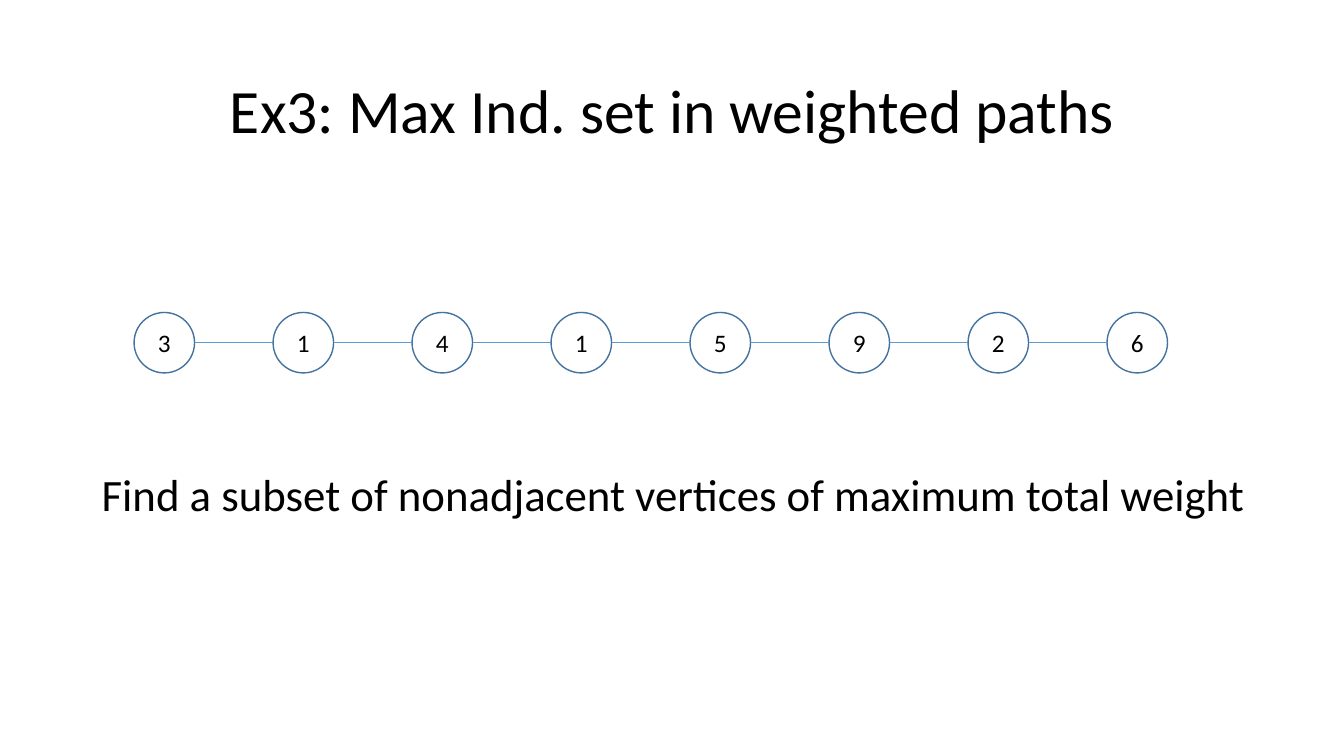
from lxml import etree
from pptx import Presentation
from pptx import util as u
from pptx.dml.color import RGBColor
from pptx.enum import shapes, text
from pptx.oxml.ns import qn

BLACK = RGBColor(0x00, 0x00, 0x00)
NODE_LINE = RGBColor(0x43, 0x73, 0x9E)
EDGE_LINE = RGBColor(0x5B, 0x9B, 0xD5)
FONT = "Calibri"
WEIGHTS = [3, 1, 4, 1, 5, 9, 2, 6]
NODE_SIZE = 0.6


def write(shape, words, size, align, frame_format, line_spacing=None):
    """Fill a shape with one formatted paragraph."""
    frame = shape.text_frame
    for name, value in frame_format.items():
        setattr(frame, name, value)
    para = frame.paragraphs[0]
    para.alignment = align
    if line_spacing:
        para.line_spacing = line_spacing
    span = para.add_run()
    span.text = words
    for name, value in {"name": FONT, "size": u.Pt(size)}.items():
        setattr(span.font, name, value)
    span.font.color.rgb = BLACK


def style_line(shape, color):
    shape.line.color.rgb = color
    shape.line.width = u.Pt(1)


def add_title(page, left, top, width, height):
    title = page.shapes.title
    box = {"left": left, "top": top, "width": width, "height": height}
    for name, value in box.items():
        setattr(title, name, u.Inches(value))
    write(title, "Ex3: Max Ind. set in weighted paths", 44, text.PP_ALIGN.CENTER,
          {"vertical_anchor": text.MSO_ANCHOR.MIDDLE, "word_wrap": True,
           "auto_size": text.MSO_AUTO_SIZE.NONE}, 0.9)


def add_weighted_path(page, left, top, width):
    step = (width - NODE_SIZE) / (len(WEIGHTS) - 1)
    lefts = [left + index * step for index in range(len(WEIGHTS))]

    # Vertices
    for node_left, weight in zip(lefts, WEIGHTS):
        node = page.shapes.add_shape(
            shapes.MSO_SHAPE.OVAL, u.Inches(node_left), u.Inches(top),
            u.Inches(NODE_SIZE), u.Inches(NODE_SIZE))
        node.shadow.inherit = False
        node.fill.background()
        style_line(node, NODE_LINE)
        write(node, str(weight), 18, text.PP_ALIGN.CENTER,
              {"vertical_anchor": text.MSO_ANCHOR.MIDDLE})

    # Edges between neighbours
    middle = u.Inches(top + NODE_SIZE / 2)
    for start, end in zip(lefts, lefts[1:]):
        edge = page.shapes.add_connector(
            shapes.MSO_CONNECTOR.STRAIGHT,
            u.Inches(start + NODE_SIZE), middle, u.Inches(end), middle)
        style_line(edge, EDGE_LINE)
        etree.SubElement(edge._element.spPr, qn("a:effectLst"))


def add_task(page, left, top, width, height):
    task = page.shapes.add_textbox(*map(u.Inches, (left, top, width, height)))
    write(task, "Find a subset of nonadjacent vertices of maximum total weight",
          32, text.PP_ALIGN.LEFT,
          {"word_wrap": True, "auto_size": text.MSO_AUTO_SIZE.SHAPE_TO_FIT_TEXT})


def main():
    deck = Presentation()
    deck.slide_width, deck.slide_height = u.Inches(13.33), u.Inches(7.5)
    page = deck.slides.add_slide(deck.slide_layouts.get_by_name("Title Only"))
    add_title(page, 0.92, 0.4, 11.5, 1.45)
    add_weighted_path(page, 1.33, 3.1, 10.25)
    add_task(page, 0.91, 4.58, 11.88, 0.64)
    deck.save("out.pptx")


if __name__ == "__main__":
    main()
